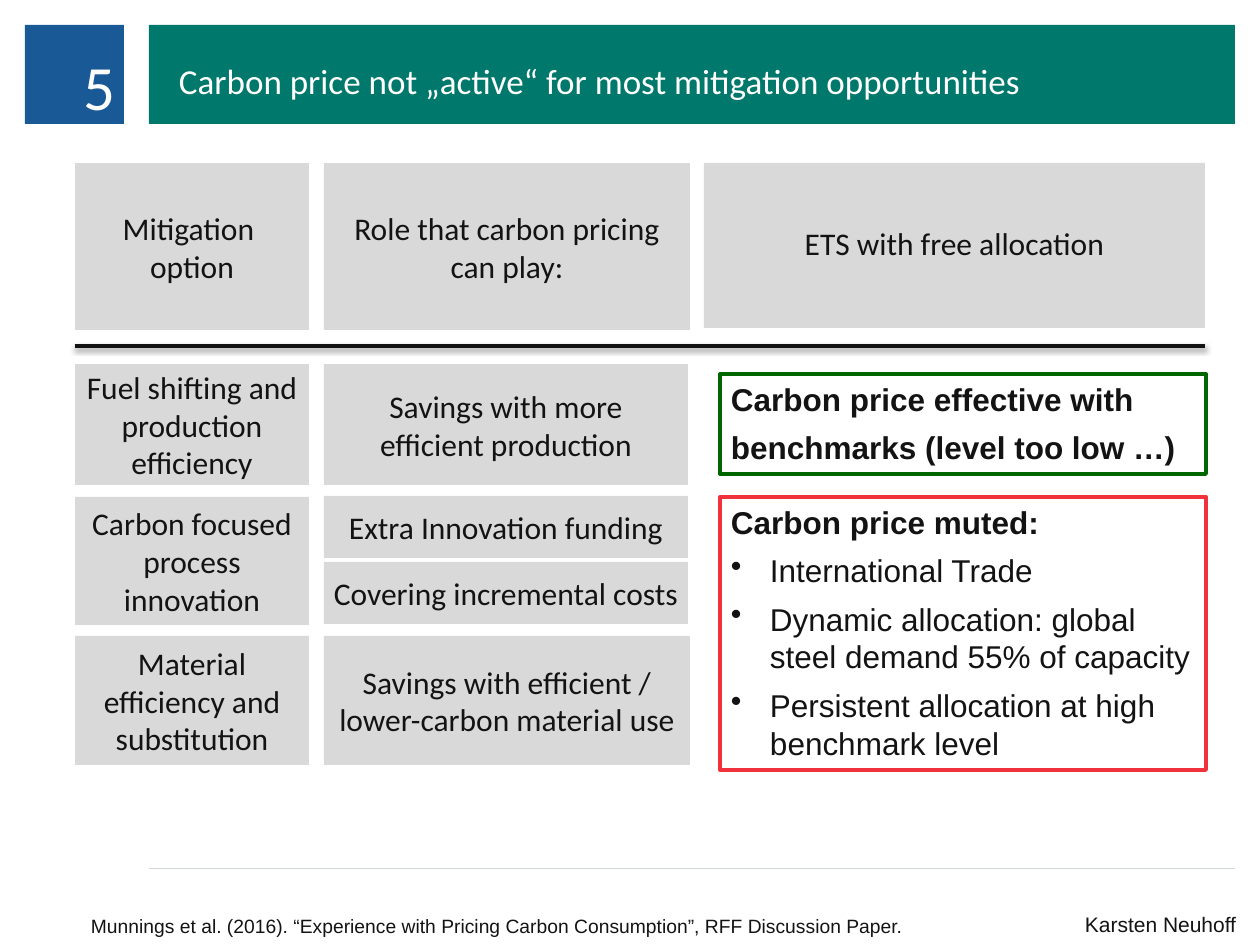
from lxml import etree
from pptx import Presentation
from pptx import util as u
from pptx.dml.color import RGBColor
from pptx.enum import shapes, text
from pptx.oxml import ns

SCALE = 914400 / 126
COLOURS = {"blue": "195A96", "green": "00786B", "grey": "D9D9D9", "rule": "D1D6DA",
           "ink": "131313", "white": "FFFFFF", "red": "F0323C", "dark green": "006600"}
LEFT, CENTER, RIGHT = text.PP_ALIGN.LEFT, text.PP_ALIGN.CENTER, text.PP_ALIGN.RIGHT
TOP, MIDDLE, BOTTOM = text.MSO_ANCHOR.TOP, text.MSO_ANCHOR.MIDDLE, text.MSO_ANCHOR.BOTTOM


def px(value):
    return u.Emu(round(value * SCALE))


def colour(name):
    return RGBColor.from_string(COLOURS[name])


class Painter:
    """Holds the style and the current slide, and draws each kind of element."""

    def __init__(self, page):
        self.page = page

    def frame(self, box, anchor=TOP, inset=(0, 0), wrap=True):
        frame = box.text_frame
        frame.word_wrap = wrap
        frame.vertical_anchor = anchor
        frame.margin_left = frame.margin_right = px(inset[0])
        frame.margin_top = frame.margin_bottom = px(inset[1])
        return frame

    def para(self, frame, words, size=18, font="Calibri", ink="ink", bold=False,
             align=LEFT, spacing=None, before=0, bullet=False):
        first = not frame.paragraphs[0].runs
        para = frame.paragraphs[0] if first else frame.add_paragraph()
        if bullet:
            props = para._p.get_or_add_pPr()
            props.set("marL", str(px(39)))
            props.set("indent", str(-px(39)))
            etree.SubElement(props, ns.qn("a:buChar")).set("char", "•")
        para.alignment = align
        if spacing:
            para.line_spacing = spacing
        if before and not first:
            para.space_before = u.Pt(before)
        span = para.add_run()
        span.text = words
        span.font.size = u.Pt(size)
        span.font.name = font
        span.font.bold = bold
        span.font.color.rgb = colour(ink)

    def label(self, x, y, w, h, words, anchor=TOP, inset=(0, 0), wrap=True, **style):
        box = self.page.shapes.add_textbox(px(x), px(y), px(w), px(h))
        self.para(self.frame(box, anchor, inset, wrap), words, **style)

    def rect(self, x, y, w, h, fill=None, line=None):
        box = self.page.shapes.add_shape(shapes.MSO_SHAPE.RECTANGLE, px(x), px(y), px(w), px(h))
        box.shadow.inherit = False
        if fill:
            box.fill.solid()
            box.fill.fore_color.rgb = colour(fill)
        else:
            box.fill.background()
        if line:
            box.line.color.rgb = colour(line)
            box.line.width = u.Pt(2.25)
        else:
            box.line.fill.background()
        return box

    def cell(self, x, y, w, h, lines, inset=(0, 0), spacing=None):
        frame = self.frame(self.rect(x, y, w, h, "grey"), MIDDLE, inset)
        for words in lines:
            self.para(frame, words, align=CENTER, spacing=spacing)

    def callout(self, y, h, line, items):
        frame = self.frame(self.rect(720, y, 486, h, line=line), TOP, (11, 6))
        for words, bold, bullet in items:
            self.para(frame, words, font="Arial", bold=bold, bullet=bullet, before=6)

    def rule(self, left, right, y, ink, width, shadow=False):
        line = self.page.shapes.add_connector(
            shapes.MSO_CONNECTOR.STRAIGHT, px(left), px(y), px(right), px(y))
        line.line.color.rgb = colour(ink)
        line.line.width = u.Pt(width)
        effects = etree.SubElement(line._element.spPr, ns.qn("a:effectLst"))
        if shadow:
            drop = etree.SubElement(effects, ns.qn("a:outerShdw"), blurRad=str(u.Pt(3.1)),
                                    dist=str(u.Pt(1.6)), dir="5400000", rotWithShape="0")
            tint = etree.SubElement(drop, ns.qn("a:srgbClr"), val="000000")
            etree.SubElement(tint, ns.qn("a:alpha"), val="38000")


def main():
    deck = Presentation()
    deck.slide_width, deck.slide_height = u.Inches(10), u.Inches(7.5)
    painter = Painter(deck.slides.add_slide(deck.slide_layouts[6]))

    painter.rect(25, 25, 99, 99, "blue")
    painter.rule(149, 1235, 868, "rule", 0.5)
    painter.rect(149, 25, 1086, 99, "green")
    painter.label(179, 42, 1029, 60, "Carbon price not „active“ for most mitigation opportunities",
                  anchor=BOTTOM, wrap=False, size=20, ink="white")
    painter.label(21, 32, 94, 94, "5", size=36, ink="white", align=RIGHT, spacing=1.2)

    options = [(163, 167, ["Mitigation ", "option"]),
               (364, 121, ["Fuel shifting and production efficiency"]),
               (497, 128, ["Carbon focused process innovation"]),
               (636, 129, ["Material efficiency and substitution"])]
    for y, h, lines in options:
        painter.cell(75, y, 234, h, lines)

    roles = [(163, 366, 167, "Role that carbon pricing can play:", (13, 6)),
             (364, 364, 121, "Savings with more efficient production", (13, 6)),
             (496, 364, 62, "Extra Innovation funding", (0, 6)),
             (562, 364, 62, "Covering incremental costs", (0, 6)),
             (636, 366, 129, "Savings with efficient / lower-carbon material use", (0, 6))]
    for y, w, h, words, inset in roles:
        painter.cell(324, y, w, h, [words], inset)

    painter.cell(704, 163, 501, 165, ["ETS with free allocation"], spacing=0.85)
    painter.rule(75, 1205, 346, "ink", 2, shadow=True)

    painter.callout(497, 273, "red", [
        ("Carbon price muted:", True, False),
        ("International Trade", False, True),
        ("Dynamic allocation: global steel demand 55% of capacity", False, True),
        ("Persistent allocation at high benchmark level", False, True)])
    painter.callout(374, 100, "dark green", [
        ("Carbon price effective with", True, False),
        ("benchmarks (level too low …)", True, False)])

    painter.label(78, 908, 882, 36,
                  "Munnings et al. (2016). “Experience with Pricing Carbon Consumption”, "
                  "RFF Discussion Paper.", inset=(13, 6), size=11, font="Arial")
    painter.label(1072, 906, 188, 39, "Karsten Neuhoff", inset=(13, 6), size=12, font="Arial")
    deck.save("out.pptx")


if __name__ == "__main__":
    main()
